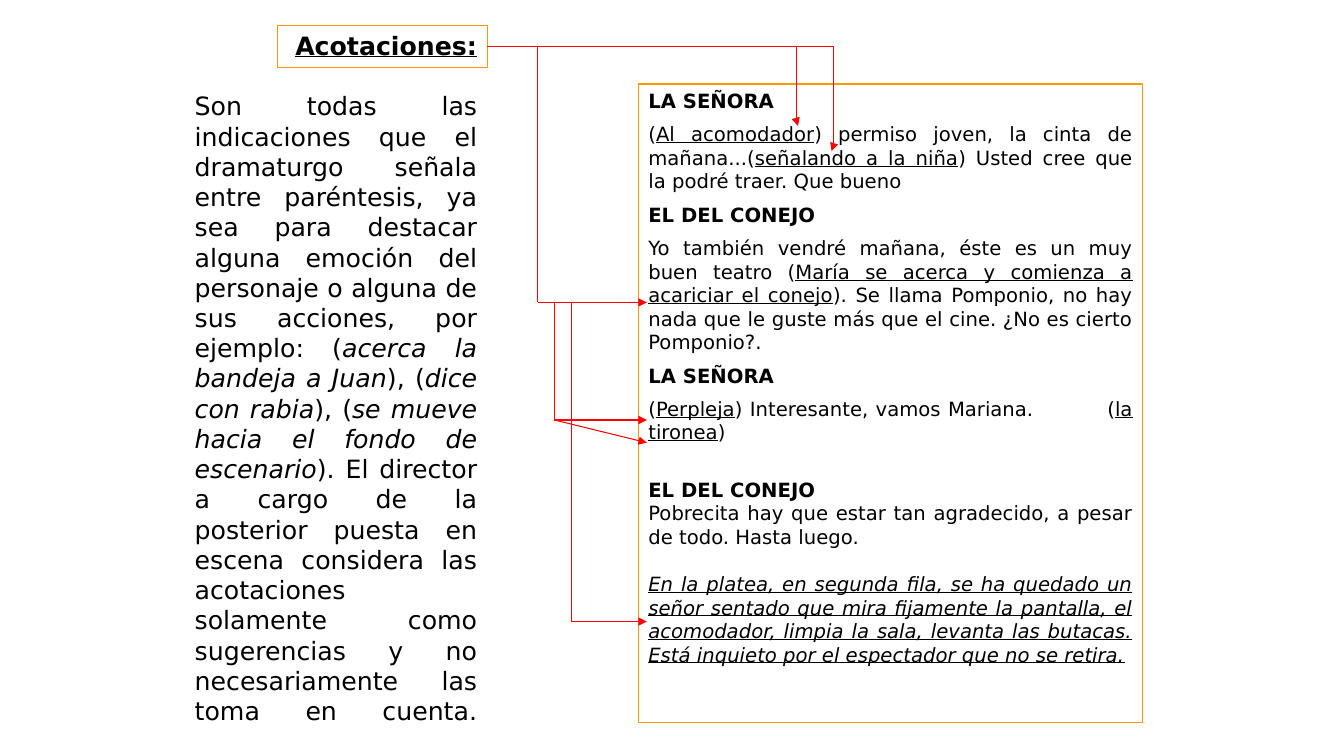
from lxml import etree
from pptx import Presentation
from pptx.dml.color import RGBColor
from pptx.enum.shapes import MSO_CONNECTOR, MSO_SHAPE
from pptx.enum.text import MSO_ANCHOR, MSO_AUTO_SIZE, PP_ALIGN
from pptx.oxml.ns import qn
from pptx.util import Inches, Pt

FONT = "DejaVu Sans"
BLACK, ORANGE, RED = "000000", "FF9900", "FF0000"
COLUMNS, ROWS = 160, 90

presentation = Presentation()
presentation.slide_width = Inches(13.33)
presentation.slide_height = Inches(7.5)
slide = presentation.slides.add_slide(presentation.slide_layouts[5])


def grid(column, row):
    """Turn a grid position or extent into slide lengths."""
    return (round(presentation.slide_width * column / COLUMNS),
            round(presentation.slide_height * row / ROWS))


def write(paragraph, text, size, alignment=PP_ALIGN.JUSTIFY, bold=False, marks=()):
    """Fill a paragraph; the parts between bars get the font marks."""
    paragraph.alignment = alignment
    for index, part in enumerate(text.split("|")):
        if not part:
            continue
        run = paragraph.add_run()
        run.text = part
        run.font.name = FONT
        run.font.size = Pt(size)
        run.font.bold = bold
        run.font.color.rgb = RGBColor.from_string(BLACK)
        for mark in marks if index % 2 else ():
            setattr(run.font, mark, True)


# Heading, definition and script excerpt
title = slide.shapes.title
title.left, title.top = grid(33, 3)
title.width, title.height = grid(25, 5)
definition = slide.shapes.add_textbox(*grid(22, 10.2), *grid(36, 79))
excerpt = slide.shapes.add_shape(MSO_SHAPE.RECTANGLE, *grid(76, 10), *grid(60, 76))
excerpt.shadow.inherit = False

for shape in (title, definition, excerpt):
    shape.text_frame.word_wrap = True
    shape.text_frame.auto_size = MSO_AUTO_SIZE.NONE
    shape.text_frame.vertical_anchor = MSO_ANCHOR.TOP
for shape in (title, excerpt):
    shape.fill.background()
    shape.line.color.rgb = RGBColor.from_string(ORANGE)
    shape.line.width = Pt(0.75)

write(title.text_frame.paragraphs[0], "|Acotaciones:|", 18, PP_ALIGN.RIGHT, True, ["underline"])
definition_paragraph = definition.text_frame.paragraphs[0]
write(
    definition_paragraph,
    "Son todas las indicaciones que el dramaturgo señala entre paréntesis, ya sea para "
    "destacar alguna emoción del personaje o alguna de sus acciones, por ejemplo: "
    "(|acerca la bandeja a Juan|), (|dice con rabia|), (|se mueve hacia el fondo de "
    "escenario|). El director a cargo de la posterior puesta en escena considera las "
    "acotaciones solamente como sugerencias y no necesariamente las toma en cuenta.",
    18, marks=["italic"])
definition_paragraph.add_line_break()  # justifies the last line as well

# Space before, bold, marks, text
excerpt_lines = [
    (0, True, [], "LA SEÑORA"),
    (7, False, ["underline"],
     "(|Al acomodador|) permiso joven, la cinta de mañana...(|señalando a la niña|) "
     "Usted cree que la podré traer. Que bueno"),
    (7, True, [], "EL DEL CONEJO"),
    (7, False, ["underline"],
     "Yo también vendré mañana, éste es un muy buen teatro (|María se acerca y comienza "
     "a acariciar el conejo|). Se llama Pomponio, no hay nada que le guste más que el "
     "cine. ¿No es cierto Pomponio?."),
    (7, True, [], "LA SEÑORA"),
    (7, False, ["underline"], "(|Perpleja|) Interesante, vamos Mariana.\t(|la tironea|)"),
    (24, True, [], "EL DEL CONEJO"),
    (0, False, [], "Pobrecita hay que estar tan agradecido, a pesar de todo. Hasta luego."),
    (17, False, ["italic", "underline"],
     "|En la platea, en segunda fila, se ha quedado un señor sentado que mira fijamente "
     "la pantalla, el acomodador, limpia la sala, levanta las butacas. Está inquieto por "
     "el espectador que no se retira.|"),
]
for index, (space, bold, marks, text) in enumerate(excerpt_lines):
    frame = excerpt.text_frame
    paragraph = frame.add_paragraph() if index else frame.paragraphs[0]
    write(paragraph, text, 14, bold=bold, marks=marks)
    paragraph.space_before = Pt(space)
    if "\t" in text:
        properties = paragraph._p.get_or_add_pPr()
        tabs = etree.SubElement(properties, qn("a:tabLst"))
        etree.SubElement(tabs, qn("a:tab"), pos=str(Inches(4.52)), algn="l")

# Lines from the heading to each stage direction: start, end, arrowhead, bend share
title_side, trunk, inner, outer, target = 58, 64, 66, 68, 77
title_row, rabbit_row, puzzled_row, audience_row = 5.5, 36, 50, 74
links = [
    ((title_side, title_row), (95, 15), True, 0.994),
    ((title_side, title_row), (99, 18), True, 1.006),
    ((trunk, title_row), (trunk, rabbit_row), False, None),
    ((inner, rabbit_row), (inner, puzzled_row), False, None),
    ((outer, rabbit_row), (outer, audience_row), False, None),
    ((trunk, rabbit_row), (target, rabbit_row), True, None),
    ((inner, puzzled_row), (target, puzzled_row), True, None),
    ((inner, puzzled_row), (target, 52.7), True, None),
    ((outer, audience_row), (target, audience_row), True, None),
]
for start, end, arrow, bend in links:
    kind = MSO_CONNECTOR.ELBOW if bend else MSO_CONNECTOR.STRAIGHT
    connector = slide.shapes.add_connector(kind, *grid(*start), *grid(*end))
    connector.line.color.rgb = RGBColor.from_string(RED)
    connector.line.width = Pt(0.75)
    shape_properties = connector.element.spPr
    etree.SubElement(shape_properties, qn("a:effectLst"))
    if arrow:
        etree.SubElement(shape_properties.find(qn("a:ln")), qn("a:tailEnd"), type="triangle")
    if bend:
        adjustments = shape_properties.find(qn("a:prstGeom")).find(qn("a:avLst"))
        etree.SubElement(adjustments, qn("a:gd"), name="adj1", fmla=f"val {round(bend * 100000)}")

presentation.save("out.pptx")
